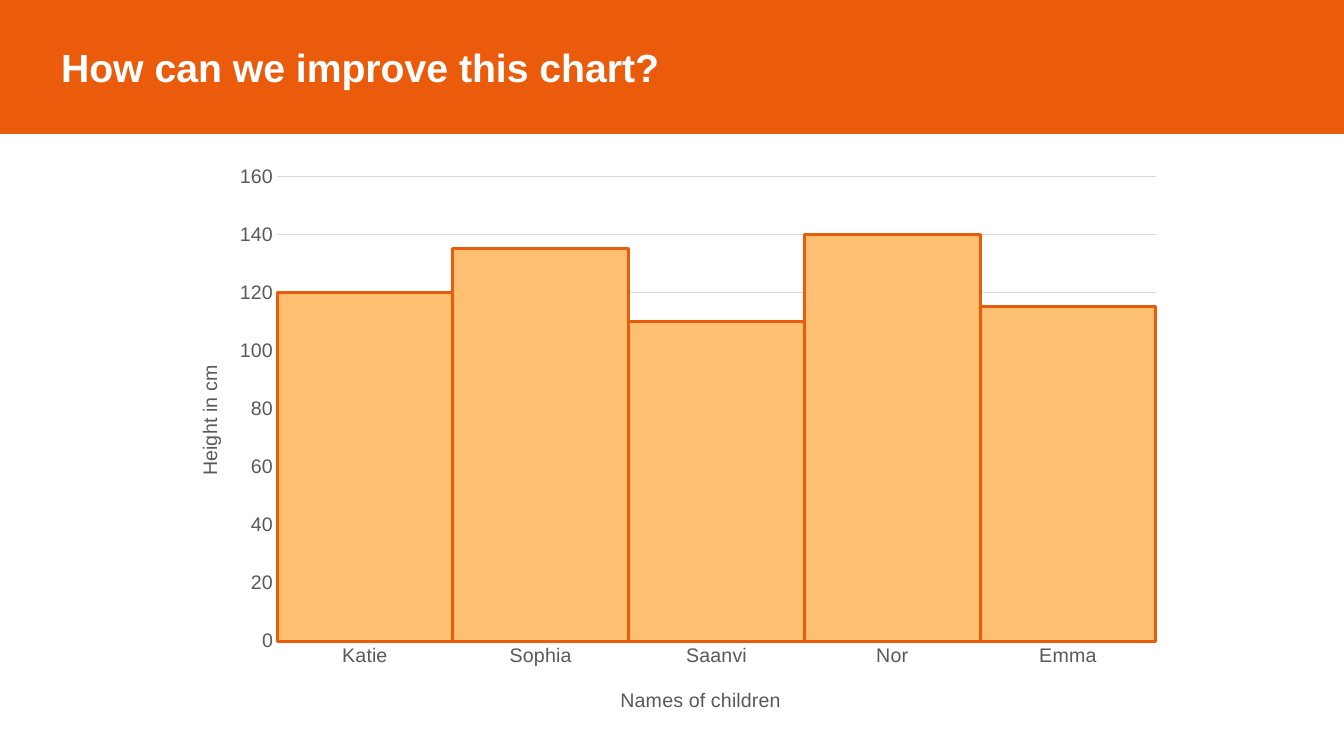
from dataclasses import dataclass
from typing import Any

from lxml import etree
from pptx import Presentation
from pptx import util as u
from pptx.chart import data as chart_data
from pptx.dml.color import RGBColor
from pptx.enum import chart as chart_enum
from pptx.enum import shapes, text
from pptx.oxml import ns

ORANGE = RGBColor(0xEA, 0x5B, 0x0C)
PEACH = RGBColor(0xFF, 0xC0, 0x71)
WHITE = RGBColor(0xFF, 0xFF, 0xFF)
GREY = RGBColor(0x59, 0x59, 0x59)
PALE_GREY = RGBColor(0xD9, 0xD9, 0xD9)
FONT = "Arial"


@dataclass(frozen=True)
class AxisLabel:
    wording: str
    x: float
    y: float
    rotation: int


@dataclass(frozen=True)
class Child:
    name: str
    height: int


NAMES_LABEL = AxisLabel("Names of children", 0.445, 0.92, 0)
HEIGHT_LABEL = AxisLabel("Height in cm", 0.025, 0.36, -5400000)
CHILDREN = [
    Child("Katie", 120),
    Child("Sophia", 135),
    Child("Saanvi", 110),
    Child("Nor", 140),
    Child("Emma", 115),
]


def apply(target: Any, values: dict[str, Any]) -> None:
    for name, value in values.items():
        setattr(target, name, value)


def style_font(font: Any, size: int, colour: RGBColor, bold: bool = False) -> None:
    apply(font, {"name": FONT, "size": u.Pt(size), "bold": bold})
    font.color.rgb = colour


def style_line(line: Any, colour: RGBColor, width: float) -> None:
    line.color.rgb = colour
    line.width = u.Pt(width)


def set_layout(parent: Any, values: dict[str, Any]) -> None:
    layout = parent.find(ns.qn("c:layout"))
    if layout is None:
        layout = etree.Element(ns.qn("c:layout"))
        parent.insert(0, layout)
    manual = etree.SubElement(layout, ns.qn("c:manualLayout"))
    for tag, value in values.items():
        etree.SubElement(manual, ns.qn(f"c:{tag}")).set("val", str(value))


def style_axis(axis: Any, label: AxisLabel) -> None:
    apply(axis, {
        "major_tick_mark": chart_enum.XL_TICK_MARK.NONE,
        "minor_tick_mark": chart_enum.XL_TICK_MARK.NONE,
    })
    style_font(axis.tick_labels.font, 14, GREY)
    title = axis.axis_title
    frame = title.text_frame
    frame.text = label.wording
    style_font(frame.paragraphs[0].runs[0].font, 14, GREY)
    body = frame._txBody.find(ns.qn("a:bodyPr"))
    body.set("rot", str(label.rotation))
    body.set("vert", "horz")
    set_layout(title._element, {
        "xMode": "edge", "yMode": "edge", "x": label.x, "y": label.y,
    })


def add_banner(slide: Any, width: int) -> None:
    banner = slide.shapes.add_shape(
        shapes.MSO_SHAPE.RECTANGLE, 0, 0, width, u.Cm(3.35))
    banner.shadow.inherit = False
    banner.fill.solid()
    banner.fill.fore_color.rgb = ORANGE
    style_line(banner.line, ORANGE, 1)
    frame = banner.text_frame
    apply(frame, {
        "margin_left": u.Cm(1.54),
        "vertical_anchor": text.MSO_ANCHOR.MIDDLE,
        "word_wrap": True,
    })
    heading = frame.paragraphs[0]
    heading.alignment = text.PP_ALIGN.LEFT
    question = heading.add_run()
    question.text = "How can we improve this chart?"
    style_font(question.font, 28, WHITE, bold=True)


def add_height_chart(slide: Any) -> None:
    heights = chart_data.CategoryChartData()
    heights.categories = [child.name for child in CHILDREN]
    heights.add_series("Series 1", [child.height for child in CHILDREN])
    chart = slide.shapes.add_chart(
        chart_enum.XL_CHART_TYPE.COLUMN_CLUSTERED,
        u.Cm(4.24), u.Cm(3.89), u.Cm(25.4), u.Cm(14.5), heights).chart
    apply(chart, {"has_legend": False, "has_title": False})
    style_font(chart.font, 14, GREY)

    bars = chart.plots[0]
    apply(bars, {"gap_width": 0, "overlap": -27, "vary_by_categories": False})
    columns = bars.series[0]
    columns.format.fill.solid()
    columns.format.fill.fore_color.rgb = PEACH
    style_line(columns.format.line, ORANGE, 2.25)

    names, scale = chart.category_axis, chart.value_axis
    style_axis(names, NAMES_LABEL)
    style_axis(scale, HEIGHT_LABEL)
    style_line(names.format.line, PALE_GREY, 0.75)
    apply(scale, {"minimum_scale": 0, "maximum_scale": 160, "major_unit": 20})
    scale.format.line.fill.background()
    style_line(scale.major_gridlines.format.line, PALE_GREY, 0.75)

    plot_area = chart.element.chart.plotArea if hasattr(chart, "element") \
        else chart._chartSpace.chart.plotArea
    set_layout(plot_area, {
        "layoutTarget": "inner", "xMode": "edge", "yMode": "edge",
        "x": 0.108, "y": 0.038, "w": 0.872, "h": 0.808,
    })


def main() -> None:
    deck = Presentation()
    apply(deck, {"slide_width": u.Cm(33.87), "slide_height": u.Cm(19.05)})
    slide = deck.slides.add_slide(deck.slide_layouts[6])
    add_banner(slide, deck.slide_width)
    add_height_chart(slide)
    deck.save("out.pptx")


if __name__ == "__main__":
    main()
